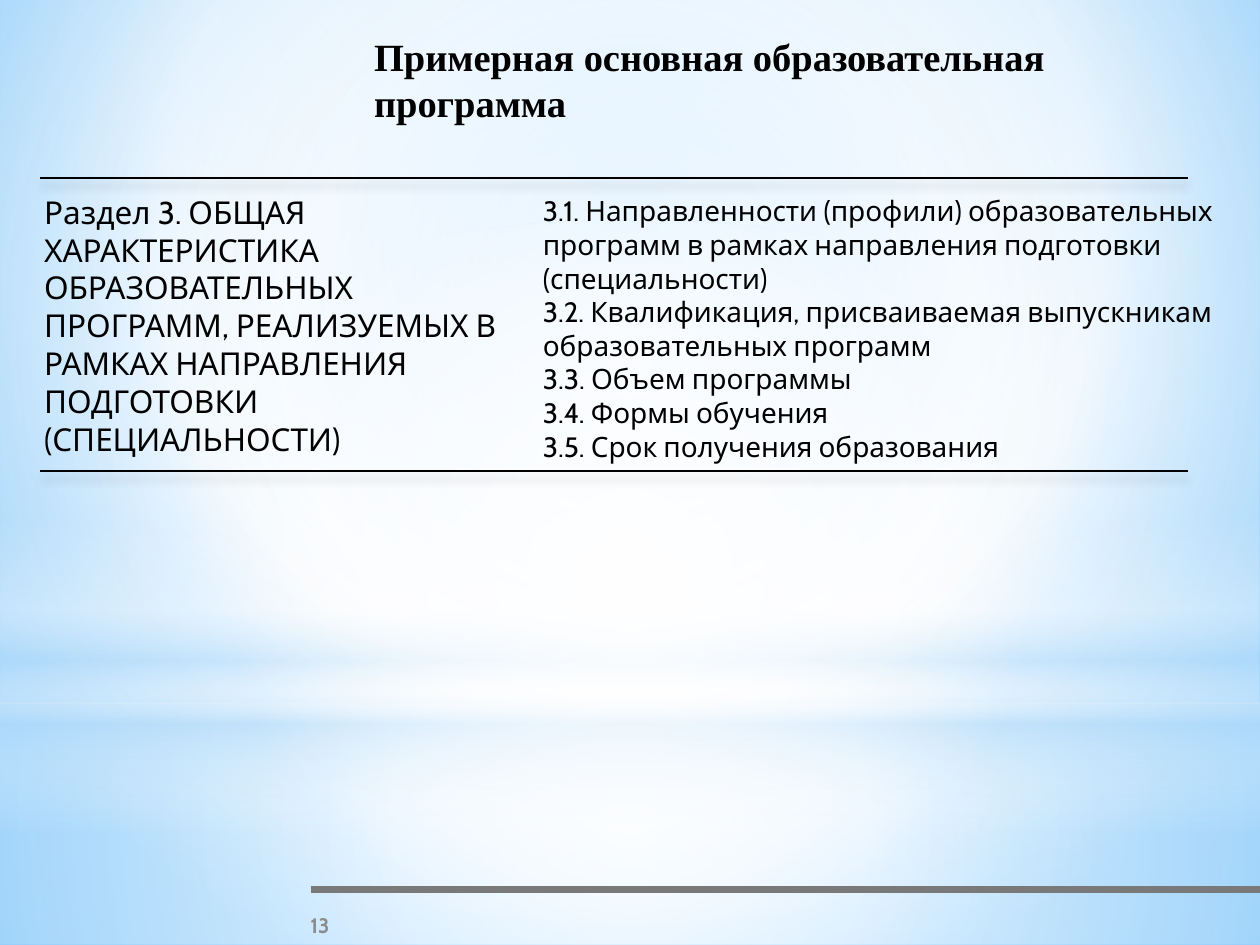
import pptx
import pptx.dml.color
import pptx.enum.shapes
import pptx.enum.text
import pptx.oxml
import pptx.oxml.ns
import pptx.util
from pptx.util import Inches

SHAPE = pptx.enum.shapes.MSO_SHAPE
ALIGN = pptx.enum.text.PP_ALIGN
ANCHOR = pptx.enum.text.MSO_ANCHOR
qn = pptx.oxml.ns.qn

SECTION = ("Раздел 3. ОБЩАЯ ХАРАКТЕРИСТИКА ОБРАЗОВАТЕЛЬНЫХ ПРОГРАММ, РЕАЛИЗУЕМЫХ "
           "В РАМКАХ НАПРАВЛЕНИЯ ПОДГОТОВКИ (СПЕЦИАЛЬНОСТИ)")
TOPICS = [
    "3.1. Направленности (профили) образовательных программ в рамках "
    "направления подготовки (специальности)",
    "3.2. Квалификация, присваиваемая выпускникам образовательных программ",
    "3.3. Объем программы",
    "3.4. Формы обучения",
    "3.5. Срок получения образования",
]


def rgb(value):
    return pptx.dml.color.RGBColor.from_string(value)


def add_child(parent, tag, **attributes):
    child = pptx.oxml.ns.qn(tag)
    child = parent.makeelement(child, {k: str(v) for k, v in attributes.items()})
    parent.append(child)
    return child


def set_gradient(fill, owner, stops, center=None, angle=0):
    """Stops are (position, colour, opacity) in percent; center is l, t, r, b."""
    fill.gradient()
    grad = owner.find(qn("a:gradFill"))
    for child in list(grad):
        grad.remove(child)
    stop_list = add_child(grad, "a:gsLst")
    for position, color, opacity in stops:
        stop = add_child(stop_list, "a:gs", pos=position * 1000)
        clr = add_child(stop, "a:srgbClr", val=color)
        if opacity < 100:
            add_child(clr, "a:alpha", val=opacity * 1000)
    if center:
        circle = add_child(grad, "a:path", path="circle")
        add_child(circle, "a:fillToRect",
                  **{side: v * 1000 for side, v in zip("ltrb", center)})
    else:
        add_child(grad, "a:lin", ang=angle * 60000, scaled=0)


def add_glow(slide, kind, left, top, width, height, stops, **direction):
    sp = slide.shapes.add_shape(kind, Inches(left), Inches(top),
                                Inches(width), Inches(height))
    sp.shadow.inherit = False
    sp.line.fill.background()
    set_gradient(sp.fill, sp._element.spPr, stops, **direction)


def add_text(slide, text, left, top, width, height, size, font="Cabin",
             color="000000", bold=False, align=ALIGN.LEFT, anchor=ANCHOR.TOP,
             margins=(0.1, 0.05), grow=True):
    """Text is one string or a list of paragraphs."""
    box = slide.shapes.add_textbox(Inches(left), Inches(top),
                                   Inches(width), Inches(height))
    tf = box.text_frame
    tf.word_wrap = True
    tf.vertical_anchor = anchor
    if grow:
        tf.auto_size = pptx.enum.text.MSO_AUTO_SIZE.SHAPE_TO_FIT_TEXT
    tf.margin_left = tf.margin_right = Inches(margins[0])
    tf.margin_top = tf.margin_bottom = Inches(margins[1])
    paragraphs = [text] if isinstance(text, str) else text
    for i, line in enumerate(paragraphs):
        p = tf.add_paragraph() if i else tf.paragraphs[0]
        p.alignment = align
        r = p.add_run()
        r.text = line
        r.font.size = pptx.util.Pt(size)
        r.font.name = font
        r.font.bold = bold
        r.font.color.rgb = rgb(color)


def add_rule(slide, left, right, y, color, weight, shadow=False):
    line = slide.shapes.add_connector(pptx.enum.shapes.MSO_CONNECTOR.STRAIGHT,
                                      Inches(left), Inches(y), Inches(right), Inches(y))
    line.line.color.rgb = rgb(color)
    line.line.width = pptx.util.Pt(weight)
    effects = add_child(line._element.spPr, "a:effectLst")
    if shadow:
        outer = add_child(effects, "a:outerShdw", blurRad=pptx.util.Pt(5),
                          dist=pptx.util.Pt(4), dir=90 * 60000, rotWithShape=0)
        clr = add_child(outer, "a:srgbClr", val="000000")
        add_child(clr, "a:alpha", val=20000)


def add_backdrop(slide, width, height):
    middle = (50, 50, 50, 50)
    horizon = 5.58
    fill = slide.background.fill
    fill.gradient()
    set_gradient(fill, slide._element.cSld.bg.bgPr,
                 [(0, "9ED5FF", 100), (60, "FFFFFF", 100), (100, "5BB9FF", 100)],
                 center=(20, 10, 20, 60))
    add_glow(slide, SHAPE.RECTANGLE, 0, horizon, width, height - horizon,
             [(0, "FFFFFF", 91), (37, "FFFFFF", 76), (100, "B4DCFA", 79)], center=middle)
    add_glow(slide, SHAPE.RECTANGLE, 0, 0, width, horizon,
             [(0, "FFFFFF", 89), (48, "FFFFFF", 62), (100, "B4DCFA", 79)], center=middle)
    add_glow(slide, SHAPE.RECTANGLE, 0, 4.12, width, 2.5,
             [(0, "FFFFFF", 0), (29, "FFFFFF", 30), (45, "B4DCFA", 40),
              (55, "FFFFFF", 26), (65, "B4DCFA", 60), (100, "FFFFFF", 0)], angle=90)
    add_glow(slide, SHAPE.OVAL, 0, 1.75, width, horizon,
             [(0, "FFFFFF", 100), (56, "FFFFFF", 0)], center=middle)


def add_section(slide, left, top, width, height):
    """Section name and its topics between two rules."""
    for y in (top, top + height):
        add_rule(slide, left, left + width, y, "000000", 1.25, shadow=True)
    add_text(slide, SECTION, left - 0.01, top + 0.1, 3.89, 1.86, 18, margins=(0.04, 0.02))
    add_text(slide, TOPICS, left + 3.89, top + 0.08, 5.59, 2.52, 16)


def add_footer(slide, left, top, right):
    add_rule(slide, left, right, top, "797979", 4)
    add_text(slide, "13", left - 0.93, top + 0.08, 2, 0.4, 12, color="8C8C8C", bold=True,
             align=ALIGN.CENTER, anchor=ANCHOR.MIDDLE, grow=False)


def main():
    width, height = 10, 7.5
    prs = pptx.Presentation()
    prs.slide_width, prs.slide_height = Inches(width), Inches(height)
    slide = prs.slides.add_slide(prs.slide_layouts[6])
    add_backdrop(slide, width, height)
    add_footer(slide, 2.47, 7.06, width)
    add_text(slide, "Примерная основная образовательная программа",
             2.87, 0.21, 6.78, 0.84, 22, font="Times New Roman", bold=True)
    add_section(slide, 0.32, 1.41, 9.11, 2.33)
    prs.save("out.pptx")


if __name__ == "__main__":
    main()
